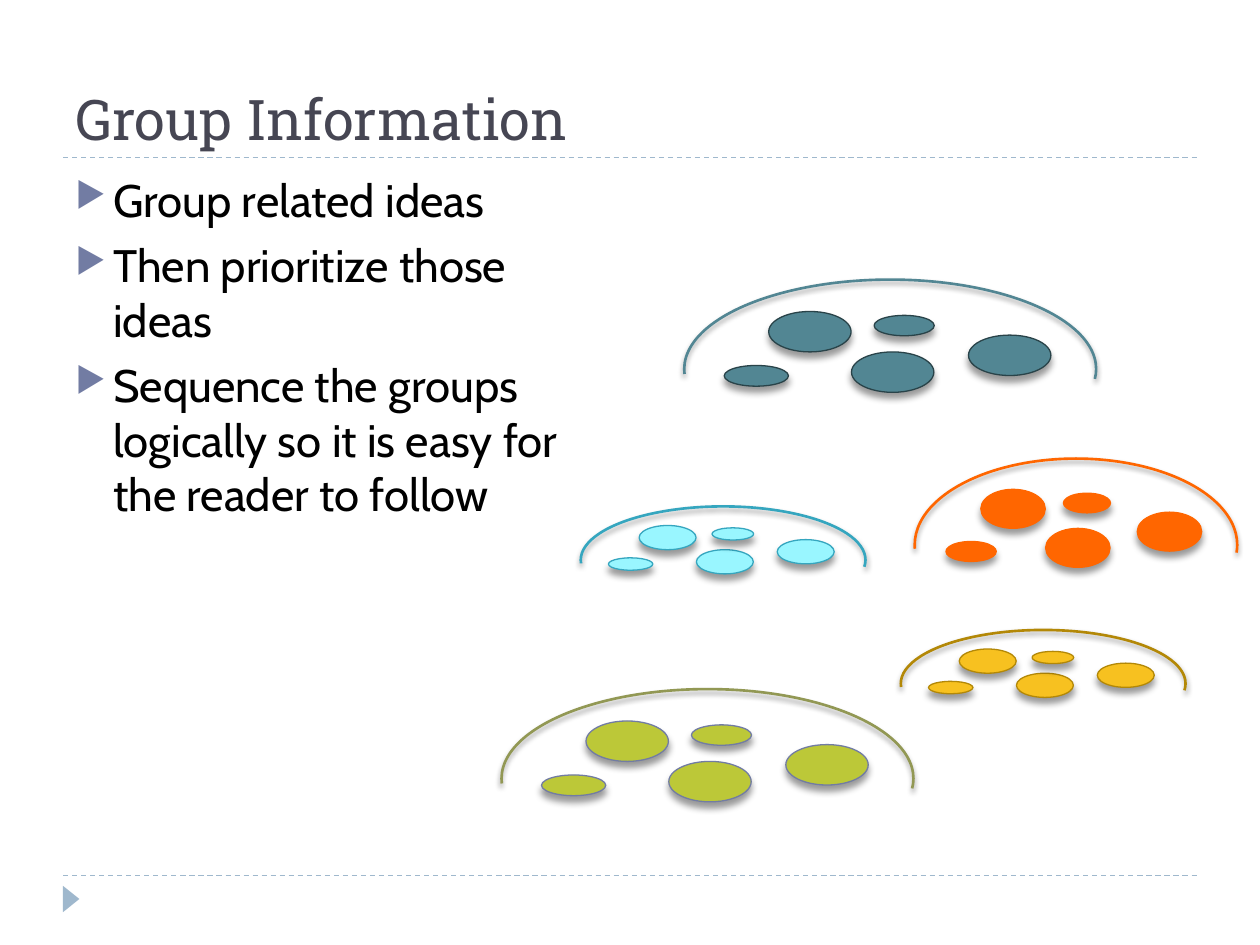
import pptx
import pptx.util
import pptx.dml.color
import pptx.enum.dml
import pptx.enum.shapes
import pptx.enum.text
import pptx.oxml
import pptx.oxml.ns

Pt = pptx.util.Pt
SHAPE = pptx.enum.shapes.MSO_SHAPE
NS = pptx.oxml.ns.nsdecls("a")


def rgb(color):
    return pptx.dml.color.RGBColor.from_string(color)


def add_text(p, text, size=26, font="Cabin", color="000000"):
    r = p.add_run()
    r.text = text
    r.font.size = Pt(size)
    r.font.name = font
    r.font.color.rgb = rgb(color)


prs = pptx.Presentation()
prs.slide_width, prs.slide_height = Pt(720), Pt(540)
s = prs.slides.add_slide(prs.slide_layouts[6])

# Dashed rules above and below the content
for y in (500.4, 90):
    line = s.shapes.add_connector(
        pptx.enum.shapes.MSO_CONNECTOR.STRAIGHT, Pt(36), Pt(y), Pt(684), Pt(y))
    line.line.color.rgb = rgb("9FB8CD")
    line.line.width = Pt(0.75)
    line.line.dash_style = pptx.enum.dml.MSO_LINE.DASH
    line._element.spPr.append(pptx.oxml.parse_xml(f"<a:effectLst {NS}/>"))

# Footer marker
sp = s.shapes.add_shape(SHAPE.ISOSCELES_TRIANGLE, Pt(33.1), Pt(509), Pt(15.1), Pt(9.4))
sp.rotation = 90
sp.shadow.inherit = False
sp.fill.solid()
sp.fill.fore_color.rgb = rgb("9FB8CD")
sp.line.fill.background()

# Bullets
tf = s.shapes.add_textbox(Pt(36), Pt(95), Pt(310.3), Pt(328.3)).text_frame
tf.word_wrap = True
bullets = [
    "Group related ideas",
    "Then prioritize those ideas",
    "Sequence the groups logically so it is easy for the reader to follow",
]
for i, text in enumerate(bullets):
    p = tf.add_paragraph() if i else tf.paragraphs[0]
    p.space_before = Pt(6)
    add_text(p, text)
    pPr = p._p.get_or_add_pPr()
    pPr.set("marL", str(Pt(21.6)))
    pPr.set("indent", str(-Pt(21.6)))
    for xml in (f'<a:buClr {NS}><a:srgbClr val="727CA3"/></a:buClr>',
                f'<a:buSzPct {NS} val="76000"/>',
                f'<a:buChar {NS} char="▶"/>'):
        pPr.append(pptx.oxml.parse_xml(xml))

# Title
tf = s.shapes.add_textbox(Pt(36), Pt(12.2), Pt(648), Pt(77.8)).text_frame
tf.word_wrap = True
tf.vertical_anchor = pptx.enum.text.MSO_ANCHOR.BOTTOM
add_text(tf.paragraphs[0], "Group Information", size=32, font="Roboto Slab", color="464653")

# Idea clusters: arc box, then fill, outline and arc colours
clusters = [
    (286.6, 393.8, 235.4, 102.2, "BCC838", "727CA3", "929854"),
    (391, 159.8, 235.4, 102.2, "528693", "294349", "528693"),
    (522.7, 262.1, 184.3, 98.6, "FF6600", "FF6600", "FF6600"),
    (514.8, 360, 162.7, 61.2, "F7C120", "B38807", "B38807"),
    (331.9, 289.4, 162.7, 61.2, "99F6FF", "35A6BF", "35A6BF"),
]
# Left, top, width and height as percentages of the arc box
parts = [
    (SHAPE.OVAL, 20.5, 17.8, 20, 22.6),
    (SHAPE.OVAL, 40.6, 40.4, 20, 22.6),
    (SHAPE.OVAL, 9.7, 48, 15.6, 11.6),
    (SHAPE.OVAL, 69, 31, 20, 22.6),
    (SHAPE.OVAL, 46.1, 20, 14.6, 11.4),
    (SHAPE.ARC, 0, 0, 100, 100),
]
for left, top, width, height, fill, outline, arc in clusters:
    group = s.shapes.add_group_shape()
    for kind, x, y, w, h in parts:
        sp = group.shapes.add_shape(
            kind, Pt(left + width * x / 100), Pt(top + height * y / 100),
            Pt(width * w / 100), Pt(height * h / 100))
        if kind == SHAPE.ARC:
            sp.adjustments[0], sp.adjustments[1] = 107.167, 1.662
            sp.fill.background()
            color, weight, blur, dist = arc, 1.5, 3, 2
        else:
            sp.fill.solid()
            sp.fill.fore_color.rgb = rgb(fill)
            color, weight, blur, dist = outline, 0.75, 4, 3.4
        sp.line.color.rgb = rgb(color)
        sp.line.width = Pt(weight)
        # Soft shadow straight below
        sp.shadow.inherit = False
        effects = sp._element.spPr.find(pptx.oxml.ns.qn("a:effectLst"))
        effects.append(pptx.oxml.parse_xml(
            f'<a:outerShdw {NS} blurRad="{Pt(blur)}" dist="{Pt(dist)}" dir="5400000" '
            'rotWithShape="0"><a:srgbClr val="000000"><a:alpha val="40000"/>'
            '</a:srgbClr></a:outerShdw>'))

prs.save("out.pptx")
